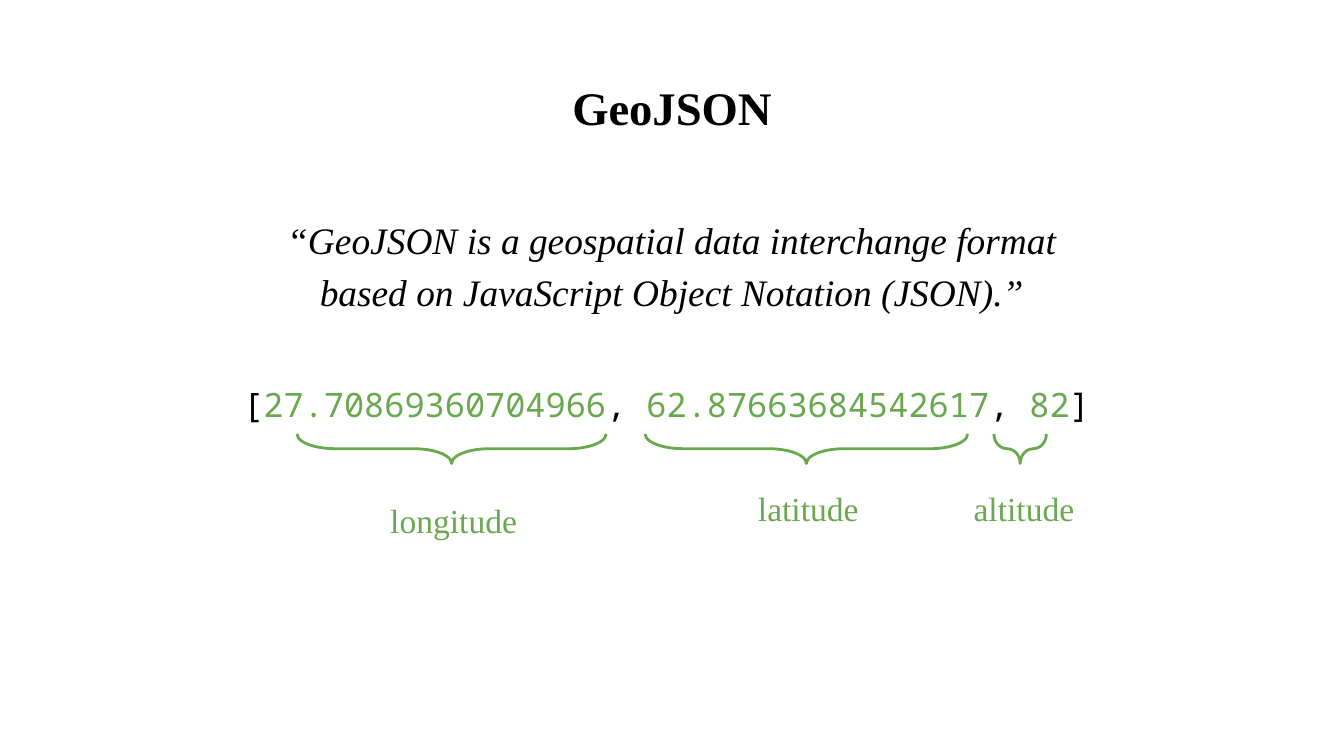
from dataclasses import dataclass

from pptx import Presentation
from pptx.dml.color import RGBColor
from pptx.enum.shapes import MSO_SHAPE
from pptx.enum.text import MSO_ANCHOR, PP_ALIGN
from pptx.slide import Slide
from pptx.util import Pt

CENTER = PP_ALIGN.CENTER
TOP = MSO_ANCHOR.TOP
MIDDLE = MSO_ANCHOR.MIDDLE
RIGHT_BRACE = MSO_SHAPE.RIGHT_BRACE


@dataclass(frozen=True)
class Theme:
    ink: RGBColor = RGBColor(0x00, 0x00, 0x00)
    accent: RGBColor = RGBColor(0x6A, 0xA8, 0x4F)
    serif: str = "Times New Roman"
    mono: str = "Noto Sans Mono"
    title_size: float = 25
    quote_size: float = 20
    detail_size: float = 18
    brace_line: float = 1.5
    inset: float = 7.2
    spacing: float = 1.15


@dataclass(frozen=True)
class Box:
    left: float
    top: float
    width: float
    height: float


@dataclass(frozen=True)
class Style:
    font: str
    size: float
    bold: bool = False
    italic: bool = False


@dataclass(frozen=True)
class Span:
    text: str
    color: RGBColor


@dataclass(frozen=True)
class Coordinate:
    """One position value: its brace below the number and its label."""
    name: str
    value: str
    brace_center: float
    brace_span: float
    label: Box


THEME = Theme()
TITLE_STYLE = Style(THEME.serif, THEME.title_size, bold=True)
QUOTE_STYLE = Style(THEME.serif, THEME.quote_size, italic=True)
CODE_STYLE = Style(THEME.mono, THEME.detail_size)
LABEL_STYLE = Style(THEME.serif, THEME.detail_size)

BRACE_MIDDLE = 240.4
BRACE_DEPTH = 15.8
BRACE_CURVE = 1.287

QUOTE = (
    "“GeoJSON is a geospatial data interchange format",
    "based on JavaScript Object Notation (JSON).”",
)
COORDINATES = (
    Coordinate("longitude", "27.70869360704966", 241.9, 165.6,
               Box(149.8, 254.2, 186.5, 45.4)),
    Coordinate("latitude", "62.87663684542617", 432, 172.8,
               Box(339.8, 247.7, 186.5, 45.4)),
    Coordinate("altitude", "82", 546.5, 28.1,
               Box(491, 247.7, 115.2, 45.4)),
)


def add_text(slide: Slide, box: Box, lines: list[list[Span]], style: Style,
             spacing: float = THEME.spacing, anchor: MSO_ANCHOR = TOP) -> None:
    frame = slide.shapes.add_textbox(
        Pt(box.left), Pt(box.top), Pt(box.width), Pt(box.height)).text_frame
    frame.word_wrap = True
    frame.vertical_anchor = anchor
    frame.margin_left = frame.margin_right = Pt(THEME.inset)
    frame.margin_top = frame.margin_bottom = Pt(THEME.inset)
    for index, spans in enumerate(lines):
        paragraph = frame.add_paragraph() if index else frame.paragraphs[0]
        paragraph.alignment = CENTER
        paragraph.line_spacing = spacing
        for span in spans:
            run = paragraph.add_run()
            run.text = span.text
            run.font.name = style.font
            run.font.size = Pt(style.size)
            run.font.bold = style.bold
            run.font.italic = style.italic
            run.font.color.rgb = span.color


def add_brace(slide: Slide, center: float, span: float) -> None:
    """Draw a brace that opens upwards, as a right brace turned by 90 degrees."""
    brace = slide.shapes.add_shape(
        RIGHT_BRACE, Pt(center - BRACE_DEPTH / 2), Pt(BRACE_MIDDLE - span / 2),
        Pt(BRACE_DEPTH), Pt(span))
    brace.rotation = 90
    brace.adjustments[0] = BRACE_CURVE
    brace.adjustments[1] = 0.5
    brace.shadow.inherit = False
    brace.fill.background()
    brace.line.color.rgb = THEME.accent
    brace.line.width = Pt(THEME.brace_line)


def position_spans() -> list[Span]:
    """Return the bracketed, comma-separated position as coloured spans."""
    spans = [Span("[", THEME.ink)]
    for index, coordinate in enumerate(COORDINATES):
        if index:
            spans.append(Span(", ", THEME.ink))
        spans.append(Span(coordinate.value, THEME.accent))
    return spans + [Span("]", THEME.ink)]


def main() -> None:
    presentation = Presentation()
    presentation.slide_width = Pt(720)
    presentation.slide_height = Pt(405)
    slide = presentation.slides.add_slide(presentation.slide_layouts[6])

    add_text(slide, Box(24.5, 35.3, 671, 45.4),
             [[Span("GeoJSON", THEME.ink)]], TITLE_STYLE, spacing=1.0)
    add_text(slide, Box(24.5, 105.8, 671, 58.3),
             [[Span(line, THEME.ink)] for line in QUOTE], QUOTE_STYLE)
    add_text(slide, Box(21.6, 195.1, 671, 58.3), [position_spans()], CODE_STYLE)
    for coordinate in COORDINATES:
        add_brace(slide, coordinate.brace_center, coordinate.brace_span)
        add_text(slide, coordinate.label, [[Span(coordinate.name, THEME.accent)]],
                 LABEL_STYLE, anchor=MIDDLE)

    presentation.save("out.pptx")


if __name__ == "__main__":
    main()
